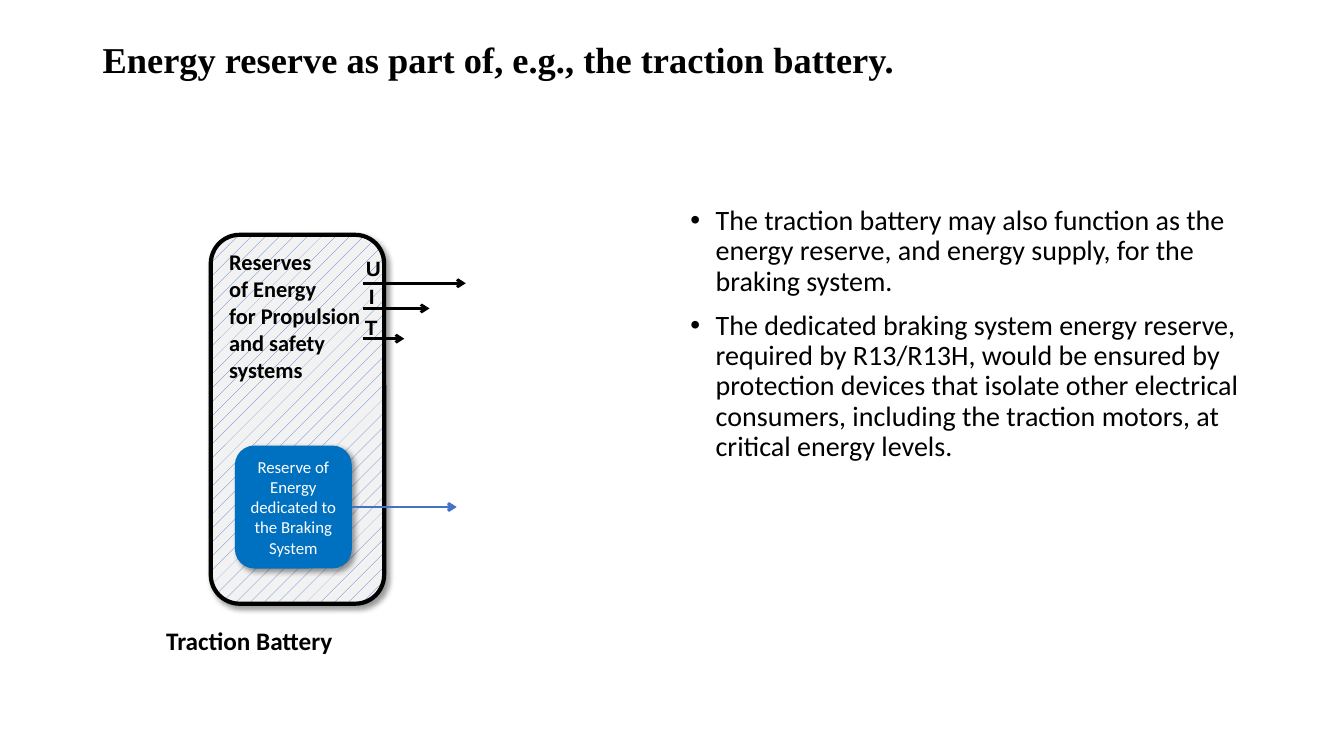
from lxml import etree
from pptx import Presentation
from pptx import util as u
from pptx.dml import color
from pptx.enum import dml, shapes, text
from pptx.oxml import ns


def rgb(value):
    return color.RGBColor.from_string(value)


def add_element(parent, tag, **attributes):
    return etree.SubElement(parent, ns.qn(tag), **attributes)


class BatterySlide:
    """Draws styled elements on one slide."""

    BLACK, WHITE, BLUE, RESERVE = "000000", "FFFFFF", "4472C4", "0070C0"

    def __init__(self, slide):
        self.slide = slide

    def set_lines(self, frame, lines, size, hue=BLACK, font="Calibri", bold=False,
                  align=text.PP_ALIGN.LEFT, bulleted=False, spacing=None):
        for index, line in enumerate(lines):
            paragraph = frame.paragraphs[0] if index == 0 else frame.add_paragraph()
            paragraph.text = line
            paragraph.alignment = align
            if spacing:
                paragraph.line_spacing = spacing
            if bulleted:
                if index:
                    paragraph.space_before = u.Pt(10)
                properties = paragraph._p.get_or_add_pPr()
                properties.set("marL", str(u.Inches(0.25)))
                properties.set("indent", str(u.Inches(-0.25)))
                add_element(properties, "a:buFont", typeface="Arial")
                add_element(properties, "a:buChar", char="•")
            paragraph.font.name = font
            paragraph.font.size = u.Pt(size)
            paragraph.font.bold = bold
            paragraph.font.color.rgb = rgb(hue)

    def label(self, box, lines, size, wrap=True,
              anchor=text.MSO_ANCHOR.TOP, **style):
        frame = self.slide.shapes.add_textbox(*map(u.Inches, box)).text_frame
        frame.word_wrap = wrap
        frame.vertical_anchor = anchor
        self.set_lines(frame, lines, size, **style)

    def block(self, box, lines, size, anchor, margin=0.1, **style):
        block = self.slide.shapes.add_shape(
            shapes.MSO_SHAPE.ROUNDED_RECTANGLE, *map(u.Inches, box))
        block.line.fill.background()
        self.shade(block)
        frame = block.text_frame
        frame.word_wrap = True
        frame.vertical_anchor = anchor
        frame.margin_left = frame.margin_right = u.Inches(margin)
        self.set_lines(frame, lines, size, **style)
        return block

    def shade(self, block):
        block.shadow.inherit = False
        effects = block._element.spPr.find(ns.qn("a:effectLst"))
        shadow = add_element(effects, "a:outerShdw", blurRad=str(u.Pt(4)),
                             dist=str(u.Pt(3)), dir="2700000",
                             algn="tl", rotWithShape="0")
        add_element(add_element(shadow, "a:srgbClr", val=self.BLACK),
                    "a:alpha", val="40000")

    def arrow(self, left, right, y, hue=BLACK, source=None):
        arrow = self.slide.shapes.add_connector(
            shapes.MSO_CONNECTOR.STRAIGHT,
            *map(u.Inches, (left, y, right, y)))
        if source is not None:
            arrow.begin_connect(source, 3)
        arrow.line.color.rgb = rgb(hue)
        arrow.line.width = u.Pt(2)
        properties = arrow._element.spPr
        add_element(properties.get_or_add_ln(), "a:tailEnd", type="arrow")
        add_element(properties, "a:effectLst")


def main():
    deck = Presentation()
    deck.slide_width, deck.slide_height = u.Inches(13.33), u.Inches(7.5)
    page = BatterySlide(deck.slides.add_slide(deck.slide_layouts[6]))

    page.label((0.92, 0.32, 11.5, 0.59),
               ["Energy reserve as part of, e.g., the traction battery."], 26,
               anchor=text.MSO_ANCHOR.MIDDLE, font="Times New Roman",
               bold=True, spacing=0.9)
    page.label((6.75, 2, 5.67, 4.76), [
        "The traction battery may also function as the energy reserve, "
        "and energy supply, for the braking system.",
        "The dedicated braking system energy reserve, required by R13/R13H, "
        "would be ensured by protection devices that isolate other electrical "
        "consumers, including the traction motors, at critical energy levels.",
    ], 20, bulleted=True, spacing=0.9)

    battery = page.block(
        (2.09, 2.33, 1.72, 3.66),
        ["Reserves", "of Energy", "for Propulsion and safety systems"],
        16, text.MSO_ANCHOR.TOP, bold=True)
    battery.fill.patterned()
    battery.fill.pattern = dml.MSO_PATTERN.PERCENT_5
    battery.fill.fore_color.rgb = rgb(page.BLUE)
    battery.fill.back_color.rgb = rgb("F2F2F2")
    battery.line.color.rgb = rgb(page.BLACK)
    battery.line.width = u.Pt(3)

    for signal, left, top, arrow_end, arrow_y in (
            ("U", 3.53, 2.49, 4.62, 2.81),
            ("I", 3.56, 2.77, 4.26, 3.06),
            ("T", 3.52, 3.07, 4.01, 3.36)):
        page.label((left, top, 0.4, 0.35), [signal], 14.8,
                   font="Arial", bold=True)
        page.arrow(3.6, arrow_end, arrow_y)

    reserve = page.block(
        (2.33, 4.42, 1.16, 1.22),
        ["Reserve of Energy dedicated to the Braking System"],
        12, text.MSO_ANCHOR.MIDDLE, margin=0.08, hue=page.WHITE,
        align=text.PP_ALIGN.CENTER)
    reserve.fill.solid()
    reserve.fill.fore_color.rgb = rgb(page.RESERVE)
    page.arrow(3.49, 4.53, 5.03, page.BLUE, reserve)

    page.label((1.55, 6.15, 1.87, 0.4), ["Traction Battery"], 18,
               wrap=False, bold=True)
    deck.save("out.pptx")


if __name__ == "__main__":
    main()
